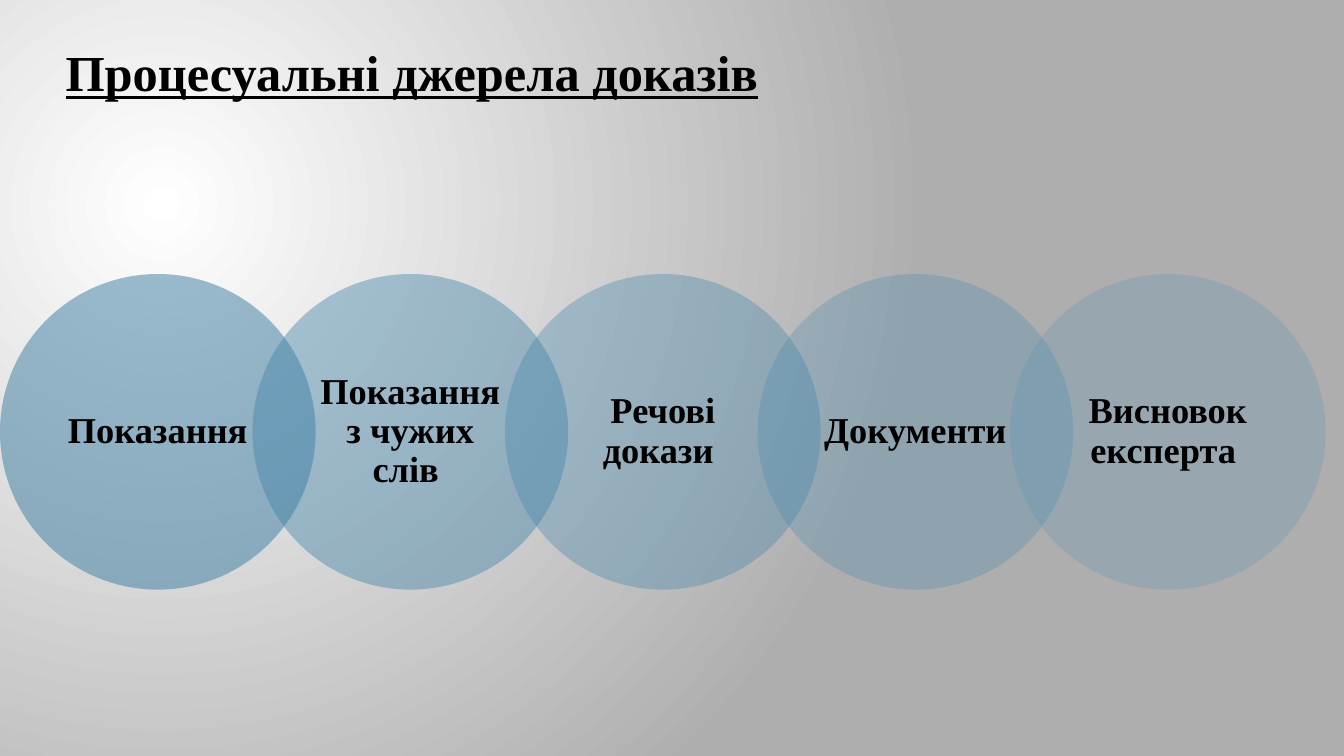
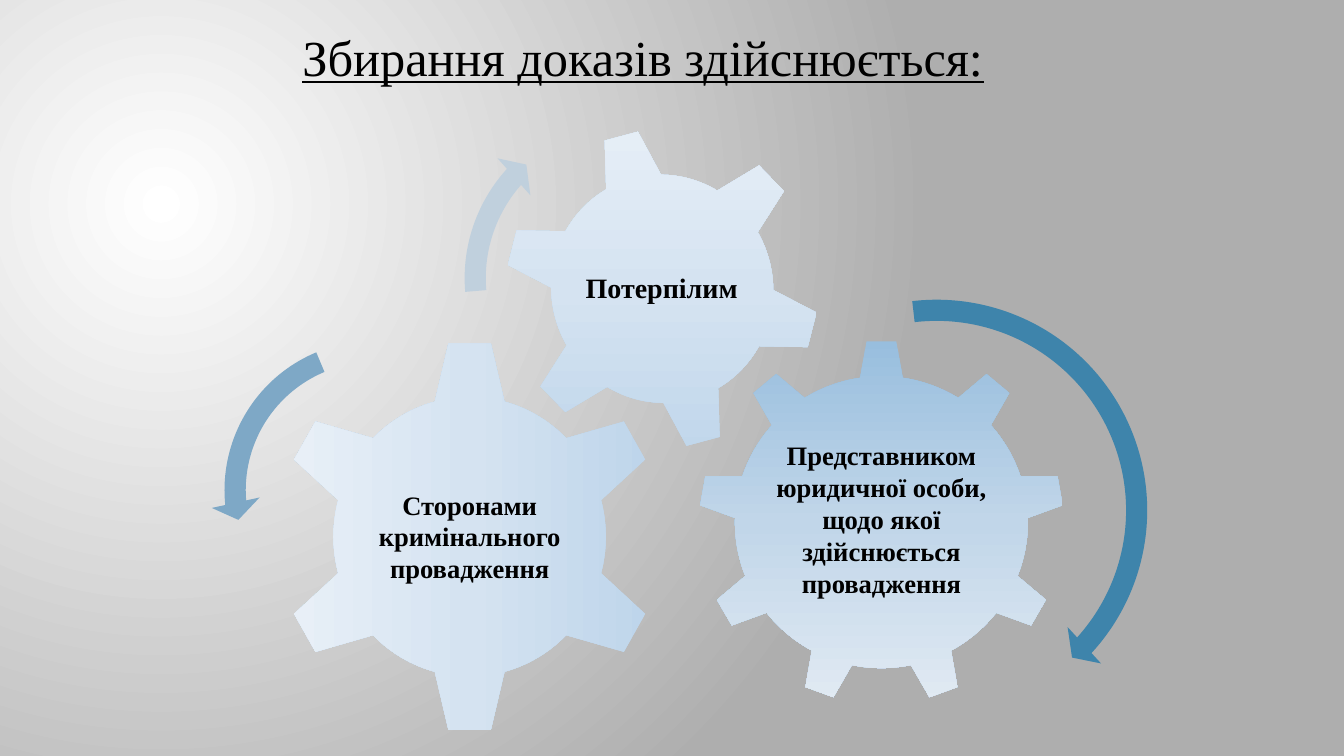
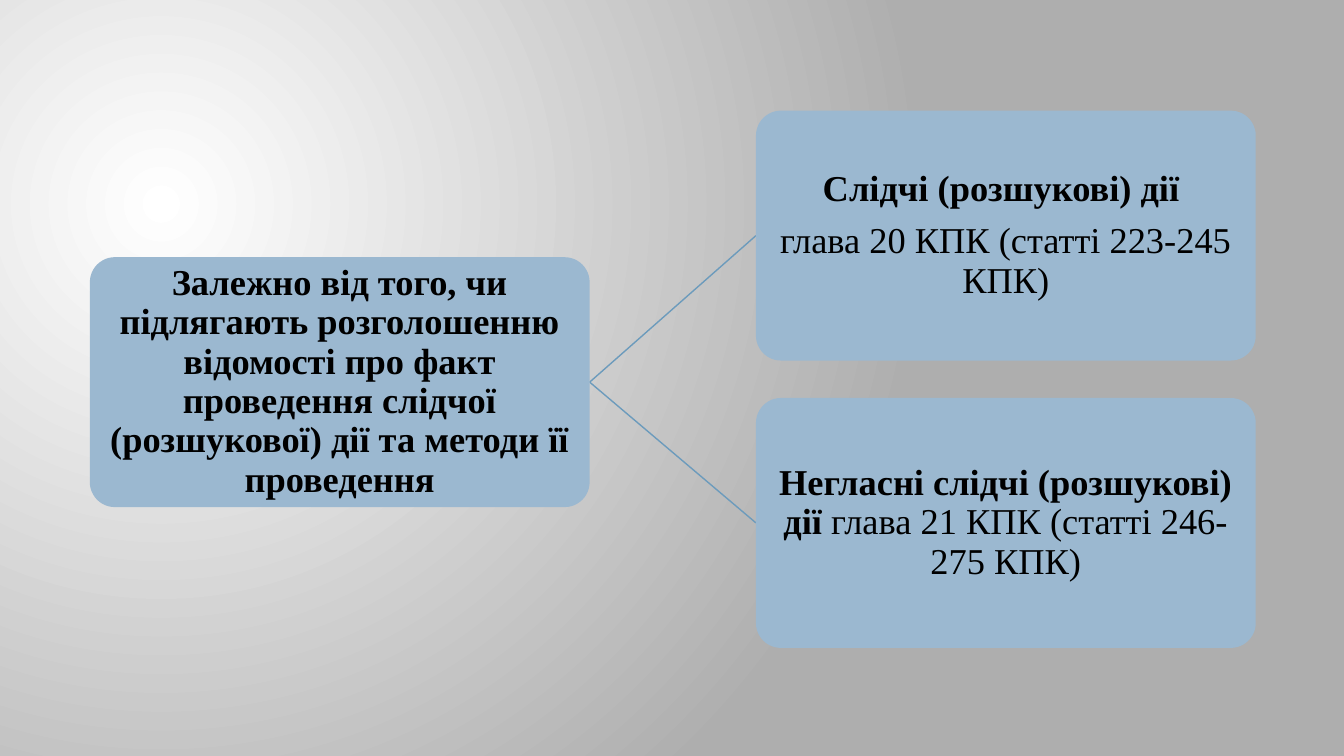
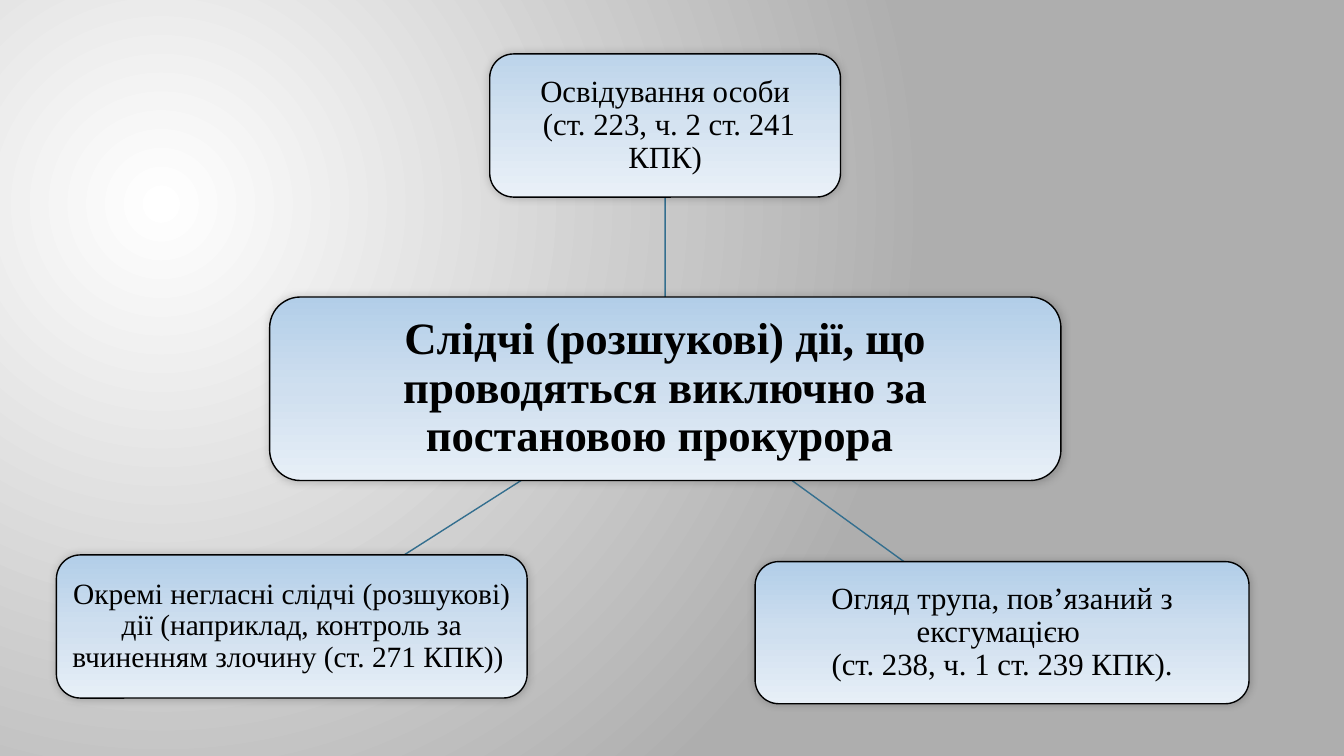
from copy import deepcopy
from dataclasses import dataclass
from typing import NamedTuple, Sequence

from lxml import etree
from pptx import Presentation
from pptx.dml.color import RGBColor
from pptx.enum.shapes import MSO_CONNECTOR, MSO_SHAPE
from pptx.enum.text import MSO_ANCHOR, MSO_AUTO_SIZE, PP_ALIGN
from pptx.oxml.ns import qn
from pptx.util import Emu, Inches, Pt

ELLIPSE, ROUNDED = MSO_SHAPE.OVAL, MSO_SHAPE.ROUNDED_RECTANGLE
GEAR_6, GEAR_9 = MSO_SHAPE.GEAR_6, MSO_SHAPE.GEAR_9
ARROW, LEFT_ARROW = MSO_SHAPE.CIRCULAR_ARROW, MSO_SHAPE.LEFT_CIRCULAR_ARROW
STRAIGHT = MSO_CONNECTOR.STRAIGHT
LEFT, CENTER = PP_ALIGN.LEFT, PP_ALIGN.CENTER
TOP, MIDDLE = MSO_ANCHOR.TOP, MSO_ANCHOR.MIDDLE

# The slide is a grid of square cells, 160 columns by 90 rows.
COLUMNS, ROWS = 160, 90
CELL = Inches(7.5) / ROWS
TITLE_ONLY, BLANK = 5, 6


@dataclass(frozen=True)
class Theme:
    font: str = "Times New Roman"
    ink: str = "000000"
    backdrop: tuple[str, ...] = ("FFFFFF", "AEAEAE")
    pale: tuple[str, ...] = ("BCD4EA", "D5E3F1", "EAF1F8")
    medium: tuple[str, ...] = ("B2CEE8", "CFDFEF", "E7EFF7")
    strong: tuple[str, ...] = ("98BEDE", "C1D6E9", "E1EAF3")
    box: str = "9BB8D0"
    box_link: str = "6C9BBC"
    node_link: str = "346F8F"
    title_size: int = 36
    center_size: int = 32
    large_size: int = 26
    node_size: int = 22
    long_node_size: int = 21
    gear_size: int = 19
    short_gear_size: int = 20
    tight: float = 0.9
    paragraph_gap: float = 0.35


THEME = Theme()


class Box(NamedTuple):
    """Place on the grid, in cells."""
    left: float
    top: float
    width: float
    height: float

    def point(self, across: float, down: float) -> tuple[float, float]:
        """Point at the given shares of the width and height."""
        return self.left + across * self.width, self.top + down * self.height


class Run(NamedTuple):
    text: str
    bold: bool = True


Paragraphs = Sequence[Sequence[Run]]


class Circle(NamedTuple):
    text: str
    color: str
    opacity: int


class Gear(NamedTuple):
    kind: MSO_SHAPE
    box: Box
    label_box: Box
    text: str
    colors: tuple[str, ...]
    angle: int
    rotation: int = 0
    size: int = THEME.gear_size
    spacing: float = 1.0


class Arrow(NamedTuple):
    kind: MSO_SHAPE
    box: Box
    color: str
    adjustments: tuple[float, ...]


class Node(NamedTuple):
    box: Box
    run: Run
    size: int = THEME.node_size
    colors: tuple[str, ...] = THEME.medium
    margin: float = 0.72


def cells(count: float) -> Emu:
    return Emu(round(count * CELL))


def place(box: Box) -> list[Emu]:
    return [cells(length) for length in box]


def fill_gradient(fill, element, colors: Sequence[str]) -> etree._Element:
    """Give the fill evenly spaced stops and return its XML element."""
    fill.gradient()
    gradient = element.find(".//" + qn("a:gradFill"))
    stop_list = gradient.find(qn("a:gsLst"))
    for _ in colors[2:]:
        stop_list.append(deepcopy(stop_list[0]))
    for index, (stop, color) in enumerate(zip(fill.gradient_stops, colors)):
        stop.color.rgb = RGBColor.from_string(color)
        stop.position = index / (len(colors) - 1)
    return gradient


def set_background(master) -> None:
    """Put a round glow, upper left, behind every slide."""
    gradient = fill_gradient(master.background.fill, master.element, THEME.backdrop)
    gradient.remove(gradient.find(qn("a:lin")))
    circle = etree.SubElement(gradient, qn("a:path"), {"path": "circle"})
    etree.SubElement(circle, qn("a:fillToRect"),
                     {"l": "50000", "t": "55000", "r": "125000", "b": "100000"})


def write_text(frame, paragraphs: Paragraphs, *, size: int, underline: bool = False,
               align: PP_ALIGN = CENTER, anchor: MSO_ANCHOR = MIDDLE,
               margins: tuple[float, float] = (0, 0), spacing: float = THEME.tight) -> None:
    """Write the runs; margins are the side and the top/bottom ones, in cells."""
    frame.word_wrap = True
    frame.auto_size = MSO_AUTO_SIZE.NONE
    frame.vertical_anchor = anchor
    frame.margin_left = frame.margin_right = cells(margins[0])
    frame.margin_top = frame.margin_bottom = cells(margins[1])
    for index, runs in enumerate(paragraphs):
        paragraph = frame.add_paragraph() if index else frame.paragraphs[0]
        paragraph.alignment = align
        paragraph.line_spacing = spacing
        paragraph.space_before = Pt(0)
        paragraph.space_after = Pt(size * THEME.paragraph_gap)
        for content in runs:
            for line_index, line in enumerate(content.text.split("\n")):
                if line_index:
                    paragraph.add_line_break()
                run = paragraph.add_run()
                run.text = line
                run.font.name = THEME.font
                run.font.size = Pt(size)
                run.font.bold = content.bold
                run.font.underline = underline
                run.font.color.rgb = RGBColor.from_string(THEME.ink)


def add_title(slide, box: Box, run: Run) -> None:
    title = slide.shapes.title
    title.left, title.top, title.width, title.height = place(box)
    write_text(title.text_frame, [[run]], size=THEME.title_size, underline=True,
               align=LEFT, anchor=TOP, margins=(1.2, 0.6), spacing=1.0)


def add_shape(slide, kind: MSO_SHAPE, box: Box, colors: str | Sequence[str], *,
              angle: int = 90, rotation: int = 0, opacity: int = 100,
              adjustments: Sequence[float] = ()):
    """Add a shape without line; several colours make a gradient.

    The gradient's angle runs clockwise and is kept when the shape is rotated.
    """
    shape = slide.shapes.add_shape(kind, *place(box))
    shape.shadow.inherit = False
    shape.line.fill.background()
    shape.rotation = rotation
    for index, value in enumerate(adjustments):
        shape.adjustments[index] = value
    if isinstance(colors, str):
        shape.fill.solid()
        shape.fill.fore_color.rgb = RGBColor.from_string(colors)
        if opacity < 100:
            color = shape.element.spPr.find(".//" + qn("a:srgbClr"))
            etree.SubElement(color, qn("a:alpha"), {"val": str(opacity * 1000)})
    else:
        fill_gradient(shape.fill, shape.element.spPr, colors)
        shape.fill.gradient_angle = (rotation - angle) % 360
    return shape


def add_soft_shadow(shape) -> None:
    effects = shape.element.spPr.find(qn("a:effectLst"))
    shadow = etree.SubElement(effects, qn("a:outerShdw"), {
        "blurRad": str(Pt(6)), "dist": "0", "dir": "13500000", "rotWithShape": "0"})
    color = etree.SubElement(shadow, qn("a:srgbClr"), {"val": THEME.ink})
    etree.SubElement(color, qn("a:alpha"), {"val": "20000"})


def add_link(slide, begin: tuple[float, float], end: tuple[float, float], color: str) -> None:
    link = slide.shapes.add_connector(STRAIGHT, *map(cells, begin + end))
    link.line.color.rgb = RGBColor.from_string(color)
    link.line.width = Pt(1)
    etree.SubElement(link.element.spPr, qn("a:effectLst"))


def edge_toward(box: Box, other: Box) -> tuple[float, float]:
    """Where the line between two centres leaves the box's top or bottom edge."""
    (x, y), (other_x, other_y) = box.point(0.5, 0.5), other.point(0.5, 0.5)
    share = box.height / 2 / abs(other_y - y)
    return x + share * (other_x - x), y + share * (other_y - y)


def build_sources(slide) -> None:
    circles = [
        Circle("Показання", "3B7DA2", 50),
        Circle("Показання з чужих слів ", "3D81A7", 42),
        Circle("Речові докази ", "3F84AB", 35),
        Circle("Документи", "4087AF", 28),
        Circle("Висновок експерта ", "428BB4", 20),
    ]
    diameter, top = 37.58, 32.62
    for index, circle in enumerate(circles):
        box = Box(index * 0.8 * diameter, top, diameter, diameter)
        shape = add_shape(slide, ELLIPSE, box, circle.color, opacity=circle.opacity)
        write_text(shape.text_frame, [[Run(circle.text)]], size=THEME.large_size,
                   margins=(2.04, 0.48))
    add_title(slide, Box(6.6, 4.3, 144.7, 10.4), Run("Процесуальні джерела доказів"))


def build_collectors(slide) -> None:
    gears = [
        Gear(GEAR_9, Box(83.16, 40.44, 43.56, 43.44), Box(91.92, 50.64, 26.04, 22.32),
             "Представником юридичної особи, щодо якої здійснюється провадження",
             THEME.strong, 90),
        Gear(GEAR_6, Box(32.76, 40.32, 46.32, 47.16), Box(44.4, 52.15, 23.04, 23.4),
             "Сторонами кримінального провадження", THEME.pale, 180),
        Gear(GEAR_6, Box(60, 15.12, 37.68, 38.52), Box(68.16, 23.7, 21.24, 21.48),
             "Потерпілим", THEME.pale, 270, 345, THEME.short_gear_size, THEME.tight),
    ]
    arrows = [
        Arrow(ARROW, Box(84.75, 34, 53.52, 53.52), "3E84AB",
              (0.047, 2.99, 25.446, 158.013, 0.055)),
        Arrow(LEFT_ARROW, Box(25.08, 38.92, 38.88, 38.88), "7EA8C6",
              (0.065, 4.3, 104.891, 148.378, 0.075)),
        Arrow(ARROW, Box(53.64, 12.12, 42, 42), "C0D0DD",
              (0.06, 3.941, 133.138, 105.082, 0.07)),
    ]
    for gear in gears:
        add_shape(slide, gear.kind, gear.box, gear.colors, angle=gear.angle,
                  rotation=gear.rotation)
        label = slide.shapes.add_textbox(*place(gear.label_box))
        write_text(label.text_frame, [[Run(gear.text)]], size=gear.size,
                   margins=(0.36, 0.36), spacing=gear.spacing)
    for arrow in arrows:
        add_shape(slide, arrow.kind, arrow.box, arrow.color, adjustments=arrow.adjustments)
    add_title(slide, Box(34.8, 2.5, 91.8, 11.4), Run("Збирання доказів здійснюється:", False))


def build_action_types(slide) -> None:
    width, height = 59.5, 29.75
    root = Box(10.7, 30.62, width, height)
    branches = [Box(90, top, width, height) for top in (13.17, 47.38)]
    texts: list[Paragraphs] = [
        [[Run("Залежно від того, чи підлягають розголошенню відомості про факт "
              "проведення слідчої (розшукової) дії та методи її проведення")]],
        [[Run("Слідчі (розшукові) дії ")],
         [Run("глава 20 КПК (статті 223-245 КПК)", False)]],
        [[Run("Негласні слідчі (розшукові) дії "),
          Run("глава 21 КПК (статті 246-275 КПК)", False)]],
    ]
    for branch in branches:
        add_link(slide, root.point(1, 0.5), branch.point(0, 0.5), THEME.box_link)
    for box, paragraphs in zip([root, *branches], texts):
        shape = add_shape(slide, ROUNDED, box, THEME.box, adjustments=[0.1])
        write_text(shape.text_frame, paragraphs, size=THEME.large_size, margins=(0.24, 0.24))


def build_prosecutor_actions(slide) -> None:
    center = Node(Box(32.1, 35.36, 94.2, 21.84),
                  Run("Слідчі (розшукові) дії, що проводяться виключно за "
                      "постановою прокурора "), THEME.center_size, margin=1.08)
    satellites = [
        Node(Box(58.3, 6.42, 41.76, 17.04),
             Run("Освідування особи\n (ст. 223, ч. 2 ст. 241 КПК)", False), colors=THEME.pale),
        Node(Box(89.9, 66.86, 58.8, 16.92),
             Run("Огляд трупа, пов’язаний з ексгумацією \n(ст. 238, ч. 1 ст. 239 КПК).", False)),
        Node(Box(6.72, 66.06, 56.04, 17.04),
             Run("Окремі негласні слідчі (розшукові) дії (наприклад, контроль за "
                 "вчиненням злочину (ст. 271 КПК)) ", False), THEME.long_node_size),
    ]
    for node in satellites:
        add_link(slide, edge_toward(center.box, node.box), edge_toward(node.box, center.box),
                 THEME.node_link)
    for node in [center, *satellites]:
        shape = add_shape(slide, ROUNDED, node.box, node.colors)
        shape.line.color.rgb = RGBColor.from_string(THEME.ink)
        shape.line.width = Pt(1)
        add_soft_shadow(shape)
        write_text(shape.text_frame, [[node.run]], size=node.size,
                   margins=(node.margin, node.margin))


def main() -> None:
    presentation = Presentation()
    presentation.slide_width = cells(COLUMNS)
    presentation.slide_height = cells(ROWS)
    set_background(presentation.slide_master)
    for layout, build in [(TITLE_ONLY, build_sources), (TITLE_ONLY, build_collectors),
                          (BLANK, build_action_types), (BLANK, build_prosecutor_actions)]:
        build(presentation.slides.add_slide(presentation.slide_layouts[layout]))
    presentation.save("out.pptx")


if __name__ == "__main__":
    main()
